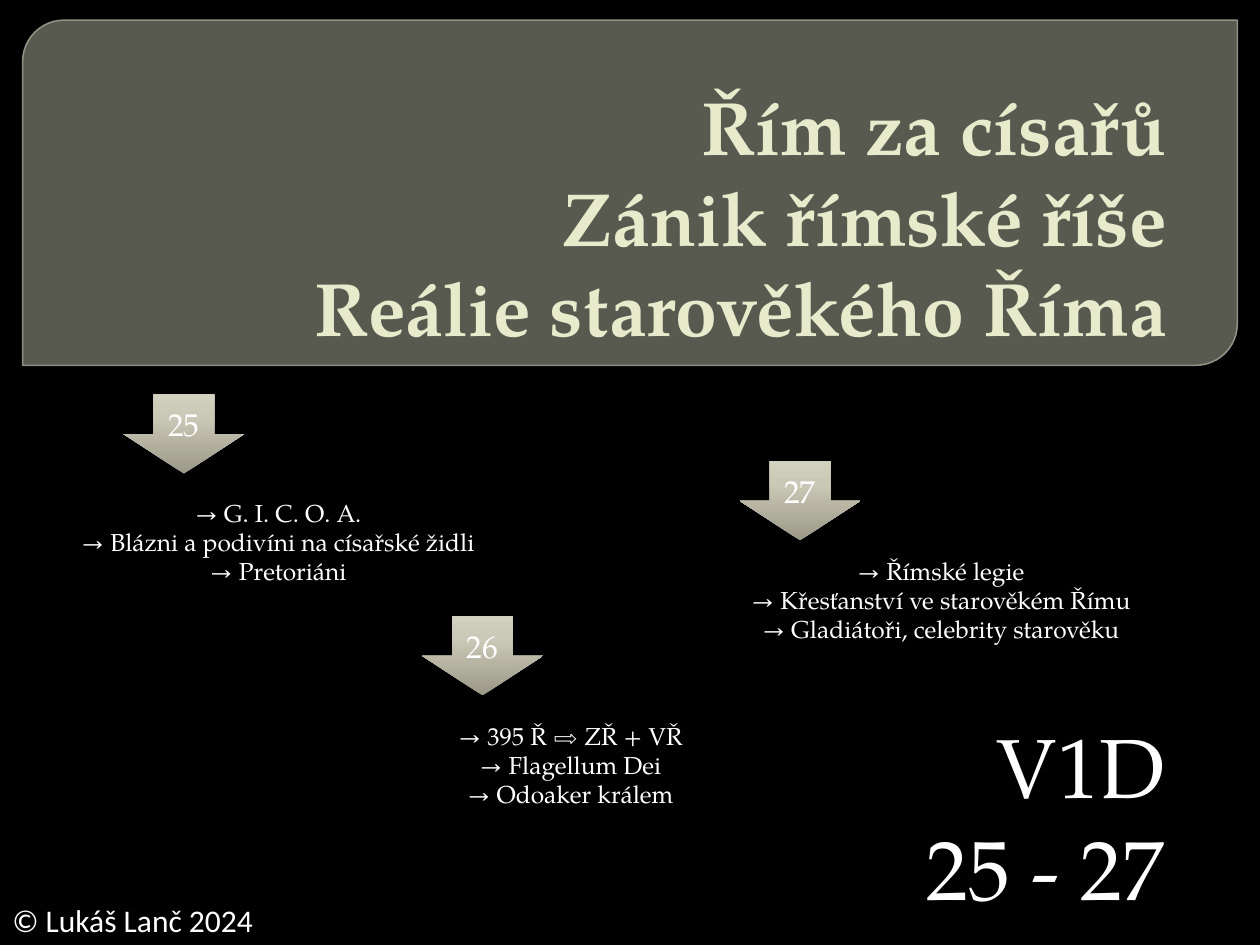
import pptx
import pptx.util
import pptx.dml.color
import pptx.enum.shapes
import pptx.enum.text
import pptx.oxml
import pptx.oxml.ns
import copy

RGB = pptx.dml.color.RGBColor
BLACK = RGB(0x00, 0x00, 0x00)
WHITE = RGB(0xFF, 0xFF, 0xFF)
CREAM = RGB(0xE7, 0xEA, 0xCB)
OLIVE = RGB(0x88, 0x8B, 0x7B)
EDGE = RGB(0x9D, 0xA0, 0x90)
STOPS = [(0, RGB(0x9B, 0x98, 0x87)),
         (0.72, RGB(0xCA, 0xC8, 0xB7)),
         (1, RGB(0xD2, 0xD0, 0xBF))]

SERIF = "TeX Gyre Pagella"
SANS = "Calibri"
COLS, ROWS = 100, 75

FORM = pptx.enum.shapes.MSO_SHAPE
ALIGN = pptx.enum.text.PP_ALIGN
ANCHOR = pptx.enum.text.MSO_ANCHOR
FIT = pptx.enum.text.MSO_AUTO_SIZE
NS = pptx.oxml.ns.nsdecls("a")
SHADOW = (f'<a:effectLst {NS}><a:outerShdw blurRad="50800" dist="38100" '
          'dir="5400000" rotWithShape="0"><a:srgbClr val="000000">'
          '<a:alpha val="43000"/></a:srgbClr></a:outerShdw></a:effectLst>')


def fade(fill, share):
    """Make a solid fill partly transparent."""
    tone = fill._xPr.find(".//" + pptx.oxml.ns.qn("a:srgbClr"))
    tone.append(pptx.oxml.parse_xml(
        f'<a:alpha {NS} val="{int(share * 100000)}"/>'))


class Deck:
    def __init__(self):
        self.file = pptx.Presentation()
        self.file.slide_width = pptx.util.Inches(10)
        self.file.slide_height = pptx.util.Inches(7.5)
        self.slide = self.file.slides.add_slide(self.file.slide_layouts[5])
        back = self.slide.background.fill
        back.solid()
        back.fore_color.rgb = BLACK

    def box(self, left, top, width, height):
        """Turn grid columns and rows into slide lengths."""
        col = self.file.slide_width / COLS
        row = self.file.slide_height / ROWS
        return [int(n) for n in
                (left * col, top * row, width * col, height * row)]

    def put(self, frame, paras, size, align, font=SERIF, color=WHITE,
            bold=False):
        """Fill a frame with text; each paragraph is a list of lines."""
        for i, lines in enumerate(paras):
            para = frame.paragraphs[0] if i == 0 else frame.add_paragraph()
            para.alignment = align
            for j, line in enumerate(lines):
                if j:
                    para.add_line_break()
                run = para.add_run()
                run.text = line
                run.font.name = font
                run.font.size = pptx.util.Pt(size)
                run.font.bold = bold
                run.font.color.rgb = color

    def panel(self, *area):
        shape = self.slide.shapes.add_shape(
            FORM.ROUND_2_DIAG_RECTANGLE, *self.box(*area))
        shape.adjustments[0], shape.adjustments[1] = 0.12, 0
        shape.shadow.inherit = False
        shape.fill.solid()
        shape.fill.fore_color.rgb = OLIVE
        fade(shape.fill, 0.65)
        shape.line.width = pptx.util.Pt(0.87)
        shape.line.color.rgb = EDGE
        fade(shape.line.fill, 0.88)
        self.slide.shapes._spTree.insert(2, shape._element)

    def title(self, lines, *area):
        shape = self.slide.shapes.title
        shape.left, shape.top, shape.width, shape.height = self.box(*area)
        frame = shape.text_frame
        frame.auto_size = FIT.NONE
        frame.vertical_anchor = ANCHOR.BOTTOM
        frame.margin_left = pptx.util.Inches(0.05)
        frame.margin_right = pptx.util.Inches(0.25)
        self.put(frame, [lines], 43, ALIGN.RIGHT, color=CREAM, bold=True)

    def text(self, lines, size, align, *area, font=SERIF, grow=True):
        frame = self.slide.shapes.add_textbox(*self.box(*area)).text_frame
        frame.word_wrap = True
        frame.auto_size = FIT.SHAPE_TO_FIT_TEXT if grow else FIT.NONE
        self.put(frame, [[line] for line in lines], size, align, font)
        return frame

    def arrow(self, label, left, top):
        shape = self.slide.shapes.add_shape(
            FORM.DOWN_ARROW, *self.box(left, top, 9.6, 6.3))
        shape.line.fill.background()
        shape.fill.gradient()
        shape.fill.gradient_angle = 90
        first = shape.fill.gradient_stops[0]._gs
        first.addnext(copy.deepcopy(first))
        for stop, (place, color) in zip(shape.fill.gradient_stops, STOPS):
            stop.position = place
            stop.color.rgb = color
        shape._element.spPr.append(pptx.oxml.parse_xml(SHADOW))
        frame = shape.text_frame
        frame.vertical_anchor = ANCHOR.MIDDLE
        self.put(frame, [[label]], 18, ALIGN.CENTER)


def main():
    deck = Deck()
    deck.panel(1.8, 1.6, 96.4, 27.4)
    deck.title(["Řím za císařů", "Zánik římské říše",
                "Reálie starověkého Říma"], 2, 4.2, 93.1, 24.2)
    deck.text(["© Lukáš Lanč 2024"], 18, ALIGN.LEFT, 0, 71, 25.6, 4,
              font=SANS)

    group = deck.text(["V1D", "25 - 27"], 48, ALIGN.RIGHT,
                      23.4, 56.2, 71.7, 19.2, grow=False)
    group.margin_left = pptx.util.Inches(0.05)
    group.margin_right = pptx.util.Inches(0.27)
    group.paragraphs[1].space_before = pptx.util.Pt(1)

    # label, arrow left and top, notes left and top, notes
    topics = [
        ("25", 9.8, 31.3, -0.2, 39,
         ["→ G. I. C. O. A.", "→ Blázni a podivíni na císařské židli",
          "→ Pretoriáni"]),
        ("26", 33.5, 48.9, 23, 56.7,
         ["→ 395 Ř ⇨ ZŘ + VŘ", "→ Flagellum Dei", "→ Odoaker králem"]),
        ("27", 58.7, 36.6, 52.4, 43.6,
         ["→ Římské legie", "→ Křesťanství ve starověkém Římu",
          "→ Gladiátoři, celebrity starověku"]),
    ]
    for label, left, top, x, y, notes in topics:
        deck.arrow(label, left, top)
        deck.text(notes, 14, ALIGN.CENTER, x, y, 44.6, 8.1)

    deck.file.save("out.pptx")


if __name__ == "__main__":
    main()
